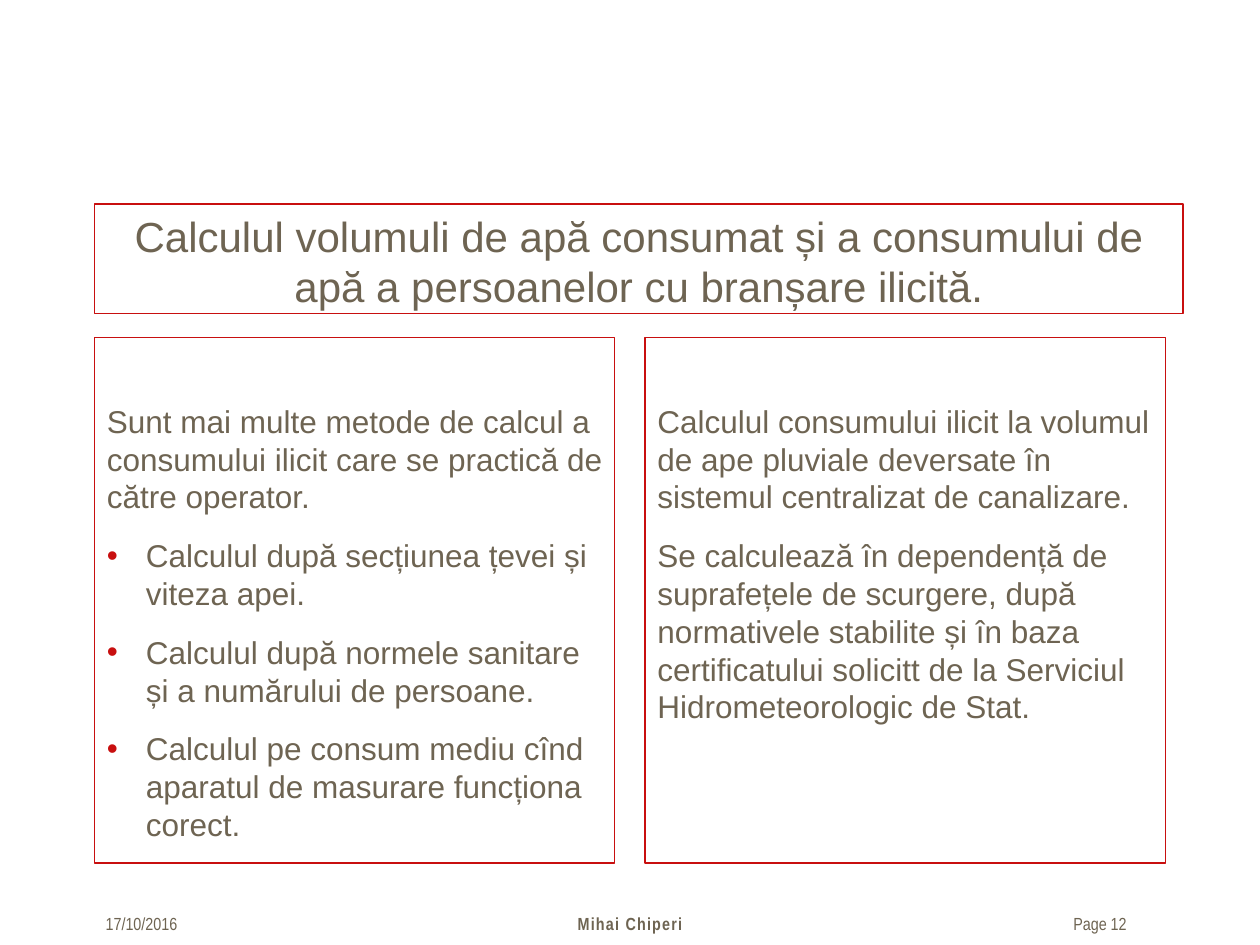
from lxml import etree
from pptx import Presentation
from pptx.dml.color import RGBColor
from pptx.enum import shapes, text
from pptx.oxml.ns import qn
from pptx.util import Inches, Pt

RED, BROWN = "C80F0F", "6E6452"


def paint(color, value):
    """Set a line or font colour from a hex string."""
    color.rgb = RGBColor.from_string(value)


def add_text(p, words, size, font="Arial", bold=False):
    r = p.add_run()
    r.text = words
    r.font.size, r.font.name, r.font.bold = Pt(size), font, bold
    paint(r.font.color, BROWN)
    return r


prs = Presentation()
prs.slide_width, prs.slide_height = Inches(10), Inches(7.5)
s = prs.slides.add_slide(prs.slide_layouts[5])

# Title
title = s.shapes.title
title.left, title.top = Inches(0.75), Inches(1.62)
title.width, title.height = Inches(8.64), Inches(0.87)
paint(title.line.color, RED)
title.line.width = Pt(0.75)
tf = title.text_frame
tf.auto_size = text.MSO_AUTO_SIZE.NONE
tf.vertical_anchor = text.MSO_ANCHOR.TOP
tf.margin_top, tf.margin_bottom = Inches(0.05), 0
p = tf.paragraphs[0]
p.alignment = text.PP_ALIGN.CENTER
p.line_spacing = 1.0
add_text(p, "Calculul volumuli de apă consumat și a consumului de apă "
            "a persoanelor cu branșare ilicită.", 24)

# Two framed columns: (left, [(words, bulleted)])
columns = [
    (0.75, [
        ("Sunt mai multe metode de calcul a consumului ilicit care se practică "
         "de către operator.", False),
        ("Calculul după secțiunea țevei și viteza apei.", True),
        ("Calculul după normele sanitare și a numărului de persoane.", True),
        ("Calculul pe consum mediu cînd aparatul de masurare funcționa corect.", True),
    ]),
    (5.12, [
        ("Calculul consumului ilicit la volumul de ape pluviale deversate în "
         "sistemul centralizat de canalizare.", False),
        ("Se calculează în dependență de suprafețele de scurgere, după normativele "
         "stabilite și în baza certificatului solicitt de la Serviciul "
         "Hidrometeorologic de Stat.", False),
    ]),
]
for left, paragraphs in columns:
    sp = s.shapes.add_shape(shapes.MSO_SHAPE.RECTANGLE, Inches(left), Inches(2.68),
                            Inches(4.13), Inches(4.17))
    sp.shadow.inherit = False
    sp.fill.background()
    paint(sp.line.color, RED)
    sp.line.width = Pt(0.75)
    tf = sp.text_frame
    tf.word_wrap = True
    tf.vertical_anchor = text.MSO_ANCHOR.TOP
    tf.margin_top = Inches(0.51)
    for i, (words, bulleted) in enumerate(paragraphs):
        p = tf.add_paragraph() if i else tf.paragraphs[0]
        p.alignment = text.PP_ALIGN.LEFT
        p.line_spacing = 1.0
        p.space_before, p.space_after = Pt(4 if i else 0), Pt(8)
        if bulleted:
            pPr = p._p.get_or_add_pPr()
            pPr.set("marL", str(Inches(0.31)))
            pPr.set("indent", str(-Inches(0.31)))
            color = etree.SubElement(pPr, qn("a:buClr"))
            etree.SubElement(color, qn("a:srgbClr"), val=RED)
            etree.SubElement(pPr, qn("a:buFont"), typeface="Arial")
            etree.SubElement(pPr, qn("a:buChar"), char="•")
        add_text(p, words, 18)

# Footer: (words, left, width, alignment, bold)
footer = [
    ("17/10/2016", 0.74, 1.42, text.PP_ALIGN.LEFT, False),
    ("Mihai Chiperi", 3.13, 3.74, text.PP_ALIGN.CENTER, True),
    ("Page 12", 8.42, 1.01, text.PP_ALIGN.LEFT, False),
]
for words, left, width, align, bold in footer:
    box = s.shapes.add_textbox(Inches(left), Inches(7.2), Inches(width), Inches(0.27))
    box.text_frame.word_wrap = True
    p = box.text_frame.paragraphs[0]
    p.alignment = align
    r = add_text(p, words, 10, "Arial Narrow", bold)
    if bold:
        r.font._element.set("spc", "70")

prs.save("out.pptx")
